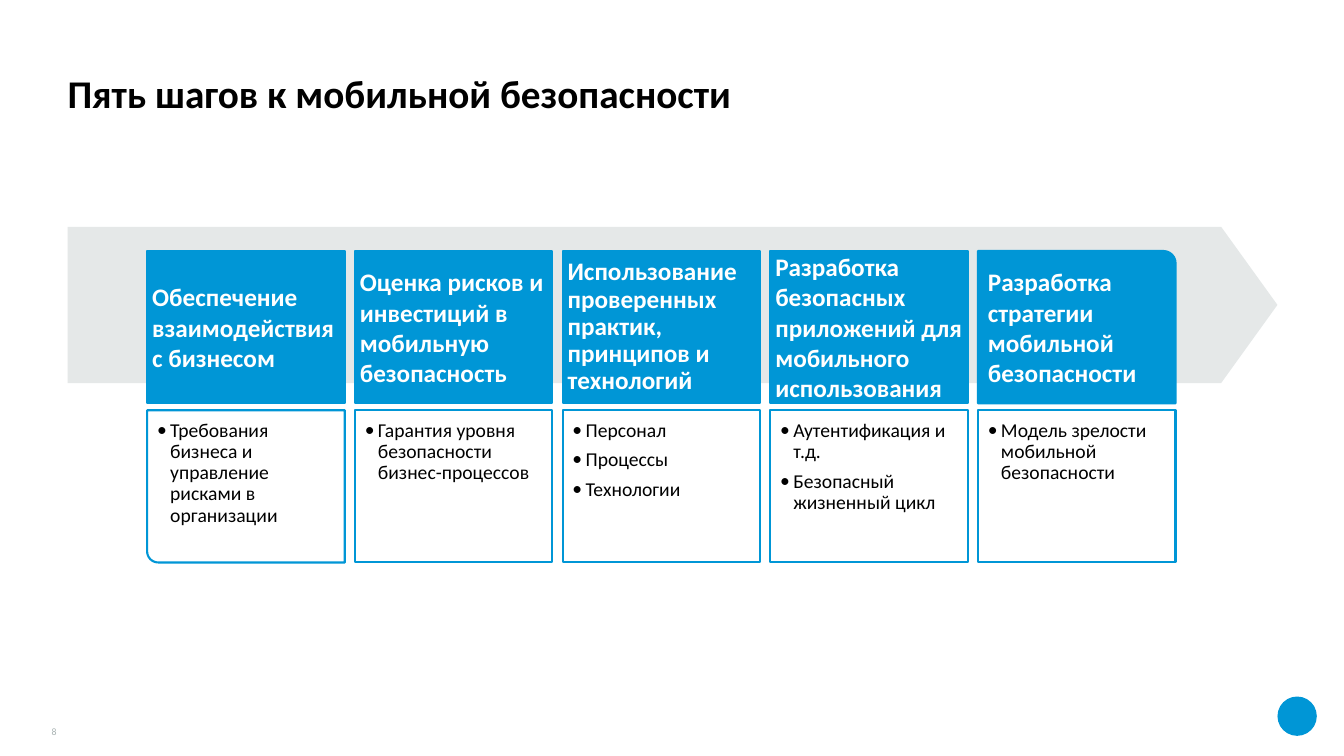
import math
import pptx
import pptx.util
import pptx.dml.color
import pptx.enum.shapes
import pptx.enum.text
import pptx.oxml.ns
import lxml.etree

Inches = pptx.util.Inches
Pt = pptx.util.Pt
RGBColor = pptx.dml.color.RGBColor
Kind = pptx.enum.shapes.MSO_SHAPE
Anchor = pptx.enum.text.MSO_ANCHOR
Align = pptx.enum.text.PP_ALIGN

BLUE = RGBColor(0x00, 0x96, 0xD6)
GREY = RGBColor(0xE5, 0xE8, 0xE8)
PALE = RGBColor(0xA8, 0xB2, 0xB2)
BLACK = RGBColor(0, 0, 0)
WHITE = RGBColor(255, 255, 255)

TITLE = "Пять шагов к мобильной безопасности"
PAGE = "8"
STEPS = [
    ("Обеспечение взаимодействия с бизнесом",
     ["Требования бизнеса и управление рисками в организации"]),
    ("Оценка рисков и инвестиций в мобильную безопасность",
     ["Гарантия уровня безопасности бизнес-процессов"]),
    ("Использование проверенных практик, принципов и технологий",
     ["Персонал", "Процессы", "Технологии"]),
    ("Разработка безопасных приложений для мобильного использования",
     ["Аутентификация и т.д.", "Безопасный жизненный цикл"]),
    ("Разработка стратегии мобильной безопасности",
     ["Модель зрелости мобильной безопасности"]),
]
LEFT, PITCH, WIDE, HIGH = 1.46, 2.06, 1.96, 1.51
HEAD, BODY = 2.49, 4.07
CURVE = 0.11
TIGHT = 2

deck = pptx.Presentation()
deck.slide_width = Inches(13.33)
deck.slide_height = Inches(7.5)
slide = deck.slides.add_slide(deck.slide_layouts[6])
shapes = slide.shapes


def write(text, shape, size, color, bold=False, align=Align.LEFT,
          anchor=Anchor.TOP, inset=(0, 0, 0, 0), lead=None, bullet=False):
    frame = shape.text_frame
    frame.word_wrap = True
    frame.vertical_anchor = anchor
    (frame.margin_left, frame.margin_top,
     frame.margin_right, frame.margin_bottom) = map(Inches, inset)
    frame.text = text
    for para in frame.paragraphs:
        para.alignment = align
        if lead:
            para.line_spacing = lead
        if bullet:
            para.space_before = Pt(6)
            props = para._p.get_or_add_pPr()
            props.set("marL", str(Inches(0.13)))
            props.set("indent", str(-Inches(0.13)))
            face = lxml.etree.SubElement(props, pptx.oxml.ns.qn("a:buFont"))
            face.set("typeface", "Calibri")
            mark = lxml.etree.SubElement(props, pptx.oxml.ns.qn("a:buChar"))
            mark.set("char", "•")
        font = para.runs[0].font
        font.name = "Calibri"
        font.size = Pt(size)
        font.bold = bold
        font.color.rgb = color


def paint(shape, fill=None, line=None):
    shape.shadow.inherit = False
    if fill is None:
        shape.fill.background()
    else:
        shape.fill.solid()
        shape.fill.fore_color.rgb = fill
    if line is None:
        shape.line.fill.background()
    else:
        shape.line.color.rgb = line
        shape.line.width = Pt(1.5)
    return shape


def draw(kind, x, y, w, h, fill=None, line=None):
    shape = shapes.add_shape(kind, Inches(x), Inches(y), Inches(w), Inches(h))
    return paint(shape, fill, line)


def label(x, y, w, h):
    return shapes.add_textbox(Inches(x), Inches(y), Inches(w), Inches(h))


def curved(x, y, w, h):
    dots = [(x + w, y), (x + w, y + h)]
    for step in range(13):
        turn = math.pi / 2 * step / 12
        dots.append((x + CURVE * (1 - math.sin(turn)),
                     y + h - CURVE * (1 - math.cos(turn))))
    pen = shapes.build_freeform(Inches(x), Inches(y))
    pen.add_line_segments([(Inches(a), Inches(b)) for a, b in dots])
    return paint(pen.convert_to_shape(), line=BLUE)


draw(Kind.OVAL, 12.67, 6.91, 0.39, 0.39, BLUE)
write(TITLE, label(0.67, 0.33, 12, 0.83), size=28, color=BLACK, bold=True,
      anchor=Anchor.BOTTOM, lead=0.9)
arrow = draw(Kind.PENTAGON, 0.67, 2.25, 12, 1.55, GREY)
arrow.adjustments[0] = 0.36

for i, (head, points) in enumerate(STEPS):
    x = LEFT + i * PITCH
    last = i == len(STEPS) - 1
    kind = Kind.ROUND_1_RECTANGLE if last else Kind.RECTANGLE
    top = draw(kind, x, HEAD, WIDE, HIGH, BLUE, BLUE)
    if last:
        top.adjustments[0] = 0.08
    write(head, top, size=18, color=WHITE, bold=True, anchor=Anchor.MIDDLE,
          inset=(0.1 if last else 0.05, 0.05) * 2,
          lead=0.9 if i == TIGHT else None)
    if i == 0:
        box = curved(x, BODY, WIDE, HIGH)
    else:
        box = draw(Kind.RECTANGLE, x, BODY, WIDE, HIGH, line=BLUE)
    write("\n".join(points), box, size=14, color=BLACK,
          inset=(0.1, 0.1, 0.1, 0.05), lead=0.9, bullet=True)

write(PAGE, label(0.23, 7.08, 0.33, 0.24), size=7, color=PALE,
      align=Align.RIGHT, anchor=Anchor.BOTTOM)

deck.save("out.pptx")
